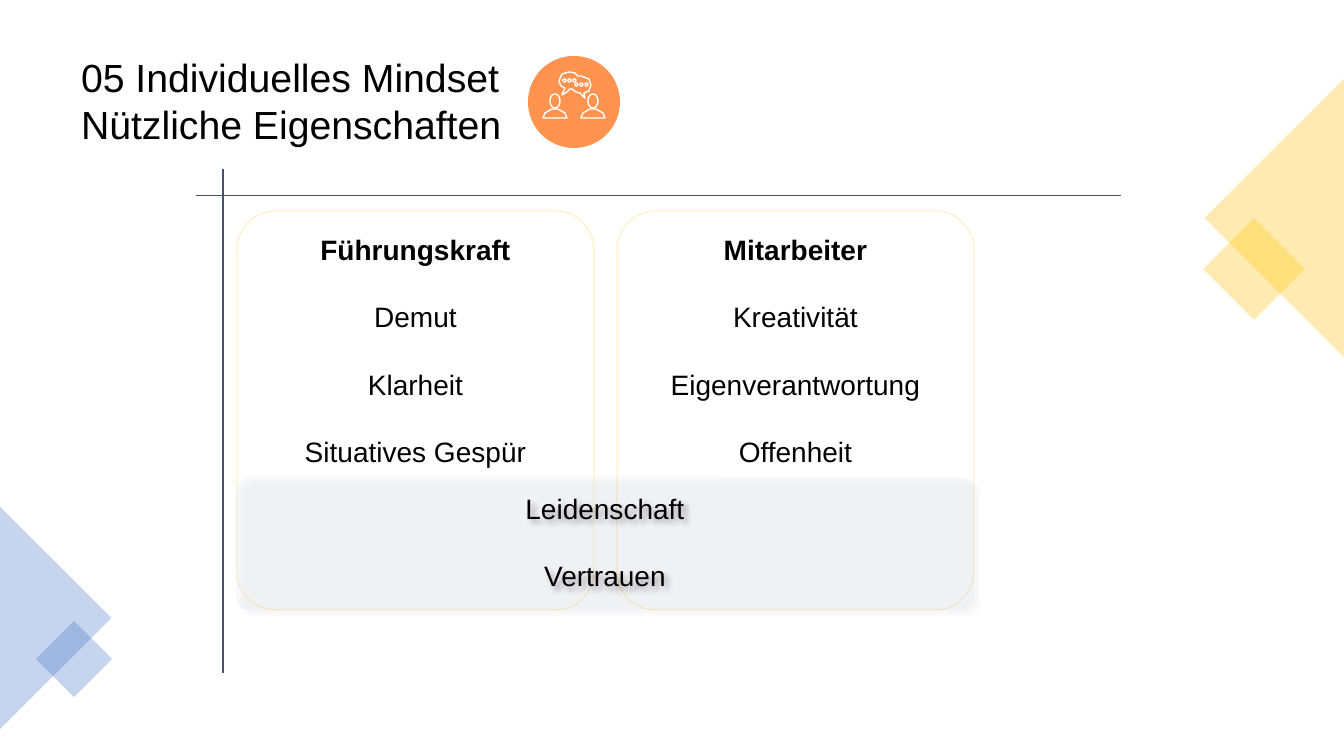
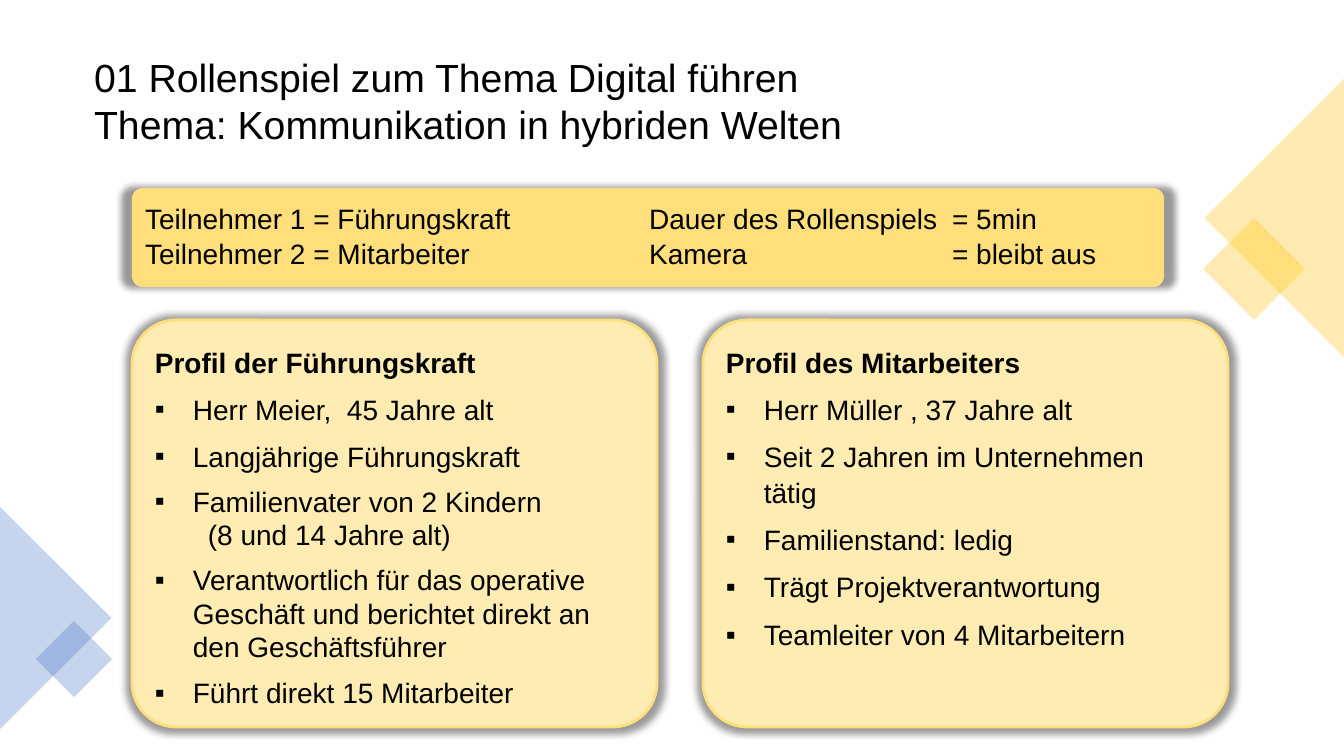
from math import cos, pi, sin
from lxml.etree import SubElement
from pptx import Presentation
from pptx.dml.color import RGBColor
from pptx.enum.shapes import MSO_CONNECTOR as CONN, MSO_SHAPE as SHAPE
from pptx.enum.text import MSO_ANCHOR as ANCHOR, MSO_AUTO_SIZE as AUTO, PP_ALIGN as ALIGN
from pptx.oxml.ns import qn
from pptx.util import Emu, Pt

FONT = "Arial"
BLACK, WHITE, SLATE = "000000", "FFFFFF", "44546A"
GOLD, BLUE, ORANGE = "FFC000", "4472C4", "FF934F"
YELLOW, CREAM, PALE_BLUE = "FFDE7C", "FFECB2", "C7D4ED"
CORNER = 0.108
BODY_SIZE, TITLE_SIZE = 20, 28


def px(n):
    """Convert pixels to EMU."""
    return Emu(round(n * 914400 / 100.8))


def rgb(color):
    """Turn a hex string into a colour."""
    return RGBColor.from_string(color)


def set_alpha(parent, percent):
    """Make the solid fill below an element partly transparent."""
    clr = parent.find(qn("a:solidFill")).find(qn("a:srgbClr"))
    SubElement(clr, qn("a:alpha"), val=str(percent * 1000))


def set_shadow(sp, blur, **attrs):
    """Give a shape a soft black outer shadow."""
    effects = sp._element.spPr.find(qn("a:effectLst"))
    outer = SubElement(effects, qn("a:outerShdw"), blurRad=str(Pt(blur)),
                       rotWithShape="0", **attrs)
    clr = SubElement(outer, qn("a:srgbClr"), val=BLACK)
    SubElement(clr, qn("a:alpha"), val="40000")


def style(sp, fill=None, line=None, width=1, alpha=None):
    """Set the fill and outline of a shape and drop its theme shadow."""
    sp.shadow.inherit = False
    if fill:
        sp.fill.solid()
        sp.fill.fore_color.rgb = rgb(fill)
        if alpha:
            set_alpha(sp._element.spPr, alpha)
    else:
        sp.fill.background()
    if line:
        sp.line.color.rgb = rgb(line)
        sp.line.width = Pt(width)
    else:
        sp.line.fill.background()
    return sp


def add_box(slide, kind, box, **look):
    """Add a styled preset shape."""
    return style(slide.shapes.add_shape(kind, *map(px, box)), **look)


def add_panel(slide, box, **look):
    """Add a rounded panel that is ready for text."""
    sp = add_box(slide, SHAPE.ROUNDED_RECTANGLE, box, **look)
    sp.adjustments[0] = CORNER
    tf = sp.text_frame
    tf.word_wrap = True
    tf.vertical_anchor = ANCHOR.TOP
    tf.margin_left = tf.margin_right = tf.margin_top = tf.margin_bottom = px(10)
    return sp


def add_line(slide, x1, y1, x2, y2):
    """Add a thin slate line."""
    line = slide.shapes.add_connector(CONN.STRAIGHT, *map(px, (x1, y1, x2, y2)))
    line.line.color.rgb = rgb(SLATE)
    line.line.width = Pt(0.75)
    SubElement(line._element.spPr, qn("a:effectLst"))


def add_run(p, text, size=BODY_SIZE, bold=False):
    """Append a run of black text."""
    r = p.add_run()
    r.text = text
    r.font.name, r.font.size, r.font.bold = FONT, Pt(size), bold
    r.font.color.rgb = rgb(BLACK)


def next_paragraph(tf, align=ALIGN.LEFT):
    """Return the empty first paragraph or a new one."""
    p = tf.paragraphs[0] if not tf.paragraphs[0].runs else tf.add_paragraph()
    p.alignment = align
    return p


def add_title(slide, x, width, lines):
    """Place the title placeholder and fill its lines."""
    sp = slide.shapes.title
    sp.left, sp.top, sp.width, sp.height = map(px, (x, 48, width, 105))
    tf = sp.text_frame
    tf.auto_size, tf.word_wrap, tf.vertical_anchor = AUTO.NONE, True, ANCHOR.TOP
    p = next_paragraph(tf)
    for i, text in enumerate(lines):
        if i:
            p.add_line_break()
        add_run(p, text, TITLE_SIZE)


def add_words(sp, words, heading=False):
    """Centre spaced words in a panel, the first optionally bold."""
    for i, word in enumerate(words):
        p = next_paragraph(sp.text_frame, ALIGN.CENTER)
        if i:
            p.space_before = Pt(24.2)
        add_run(p, word, bold=heading and i == 0)


def set_indent(p, left, bullet):
    """Indent a paragraph, with a hanging square bullet if asked."""
    pPr = p._p.get_or_add_pPr()
    pPr.set("marL", str(px(left)))
    pPr.set("indent", str(px(-left) if bullet else 0))
    if bullet:
        SubElement(pPr, qn("a:buFont"), typeface=FONT)
        SubElement(pPr, qn("a:buChar"), char="▪")


def add_profile(slide, x, heading, items):
    """Add a profile card; each item is text, line spacing and an optional detail."""
    sp = add_panel(slide, (x, 320, 525, 407), fill=CREAM, line=YELLOW, width=2)
    set_shadow(sp, 5, sx="102000", sy="102000", algn="ctr")
    tf = sp.text_frame
    p = next_paragraph(tf)
    p.line_spacing, p.space_after = 1.07, Pt(8)
    add_run(p, heading, bold=True)
    for text, spacing, *details in items:
        p = next_paragraph(tf)
        set_indent(p, 38, True)
        p.line_spacing, p.space_after = spacing, Pt(0 if details else 8)
        add_run(p, text)
        for detail in details:
            p = next_paragraph(tf)
            set_indent(p, 53, False)
            p.space_after = Pt(8)
            add_run(p, detail)
    p.space_before = Pt(0.8)


def add_tabbed(sp, rows, stops):
    """Fill a panel with rows whose columns sit on tab stops."""
    for row in rows:
        p = next_paragraph(sp.text_frame)
        tabs = SubElement(p._p.get_or_add_pPr(), qn("a:tabLst"))
        for stop in stops:
            SubElement(tabs, qn("a:tab"), pos=str(px(stop)), algn="l")
        p.space_after = Pt(1.6)
        add_run(p, "\t".join(row))


def ellipse_points(x, y, w, h):
    """List points around an ellipse in a box."""
    angles = [i * pi / 12 for i in range(24)]
    return [(x + w / 2 * (1 + cos(a)), y + h / 2 * (1 + sin(a))) for a in angles]


def add_outlines(slide, contours):
    """Add one white drawing made of closed contours."""
    builder = None
    for contour in contours:
        start, *rest = [tuple(map(px, point)) for point in contour]
        if builder:
            builder.move_to(*start)
        else:
            builder = slide.shapes.build_freeform(*start)
        builder.add_line_segments(rest, close=True)
    style(builder.convert_to_shape(), line=WHITE)


def add_dialog_icon(slide):
    """Draw two talking people on an orange disc."""
    add_box(slide, SHAPE.OVAL, (528, 56, 92, 92), fill=ORANGE)
    contours = [[(585, 98), (584, 93), (589, 91), (591, 85), (589, 79), (581, 76),
                 (578, 76), (575, 73), (569, 72), (562, 74), (559, 81), (561, 86),
                 (565, 88), (562, 95), (567, 92), (570, 89), (572, 89), (576, 92),
                 (580, 93)]]
    for x in (543, 581):
        contours.append([(x, 118), (x + 2, 113), (x + 9, 109), (x + 15, 109),
                         (x + 22, 113), (x + 24, 118)])
        contours.append(ellipse_points(x + 7, 94, 10, 14))
    for x, y in ((563, 79), (575, 83)):
        contours += [ellipse_points(x + 5 * i, y, 3, 3) for i in range(3)]
    add_outlines(slide, contours)


def decorate(layout, slide):
    """Draw the corner diamonds and hand them to the shared layout."""
    corners = [
        (SHAPE.RECTANGLE, (1218, 233, 72, 72), 45, GOLD),
        (SHAPE.ISOSCELES_TRIANGLE, (1135, 148, 279, 140), 270, GOLD),
        (SHAPE.ISOSCELES_TRIANGLE, (-56, 562, 223, 112), 90, BLUE),
        (SHAPE.RECTANGLE, (47, 632, 54, 54), 45, BLUE),
    ]
    for i, (kind, box, angle, color) in enumerate(corners):
        sp = add_box(slide, kind, box, fill=color, alpha=30)
        sp.rotation = angle
        sp._element.nvSpPr.cNvPr.set("id", str(100 + i))
        layout.shapes.element.append(sp._element)


def build_traits(slide):
    """Build the slide on useful traits."""
    add_title(slide, 71, 892, ["05 Individuelles Mindset", "Nützliche Eigenschaften"])
    add_line(slide, 223, 169, 223, 673)
    add_line(slide, 1121, 196, 196, 196)
    columns = [
        ["Führungskraft", "Demut", "Klarheit", "Situatives Gespür"],
        ["Mitarbeiter", "Kreativität", "Eigenverantwortung", "Offenheit"],
    ]
    for i, words in enumerate(columns):
        sp = add_panel(slide, (237 + 380 * i, 211, 357, 399),
                       fill=WHITE, line=YELLOW, width=0)
        set_alpha(sp._element.spPr.find(qn("a:ln")), 46)
        add_words(sp, words, heading=True)
    shared = add_panel(slide, (236, 477, 738, 133), fill=PALE_BLUE, alpha=10)
    set_shadow(shared, 4, dist=str(Pt(3)), dir="2700000", algn="tl")
    add_words(shared, ["Leidenschaft", "Vertrauen"])
    add_dialog_icon(slide)


def build_role_play(slide):
    """Build the slide on the role play."""
    add_title(slide, 84, 1080, ["01 Rollenspiel zum Thema Digital führen",
                                "Thema: Kommunikation in hybriden Welten"])
    add_profile(slide, 132, "Profil der Führungskraft", [
        ("Herr Meier,  45 Jahre alt", 1.07),
        ("Langjährige Führungskraft", 1.07),
        ("Familienvater von 2 Kindern", 1.0, "(8 und 14 Jahre alt)"),
        ("Verantwortlich für das operative Geschäft und berichtet direkt an "
         "den Geschäftsführer", 1.0),
        ("Führt direkt 15 Mitarbeiter", 1.0),
    ])
    add_profile(slide, 703, "Profil des Mitarbeiters", [(text, 1.07) for text in (
        "Herr Müller , 37 Jahre alt",
        "Seit 2 Jahren im Unternehmen tätig",
        "Familienstand: ledig",
        "Trägt Projektverantwortung",
        "Teamleiter von 4 Mitarbeitern",
    )])
    bar = add_panel(slide, (132, 188, 1032, 99), fill=YELLOW)
    set_shadow(bar, 5, sx="102000", sy="102000", algn="ctr")
    add_tabbed(bar, [
        ("Teilnehmer 1 = Führungskraft", "Dauer des Rollenspiels", "= 5min"),
        ("Teilnehmer 2 = Mitarbeiter", "Kamera", "= bleibt aus"),
    ], (504, 807))


def main():
    """Build and save the presentation."""
    prs = Presentation()
    prs.slide_width, prs.slide_height = px(1344), px(756)
    layout = prs.slide_layouts.get_by_name("Title Only")
    traits, role_play = (prs.slides.add_slide(layout) for _ in range(2))
    decorate(layout, traits)
    build_traits(traits)
    build_role_play(role_play)
    prs.save("out.pptx")


if __name__ == "__main__":
    main()
